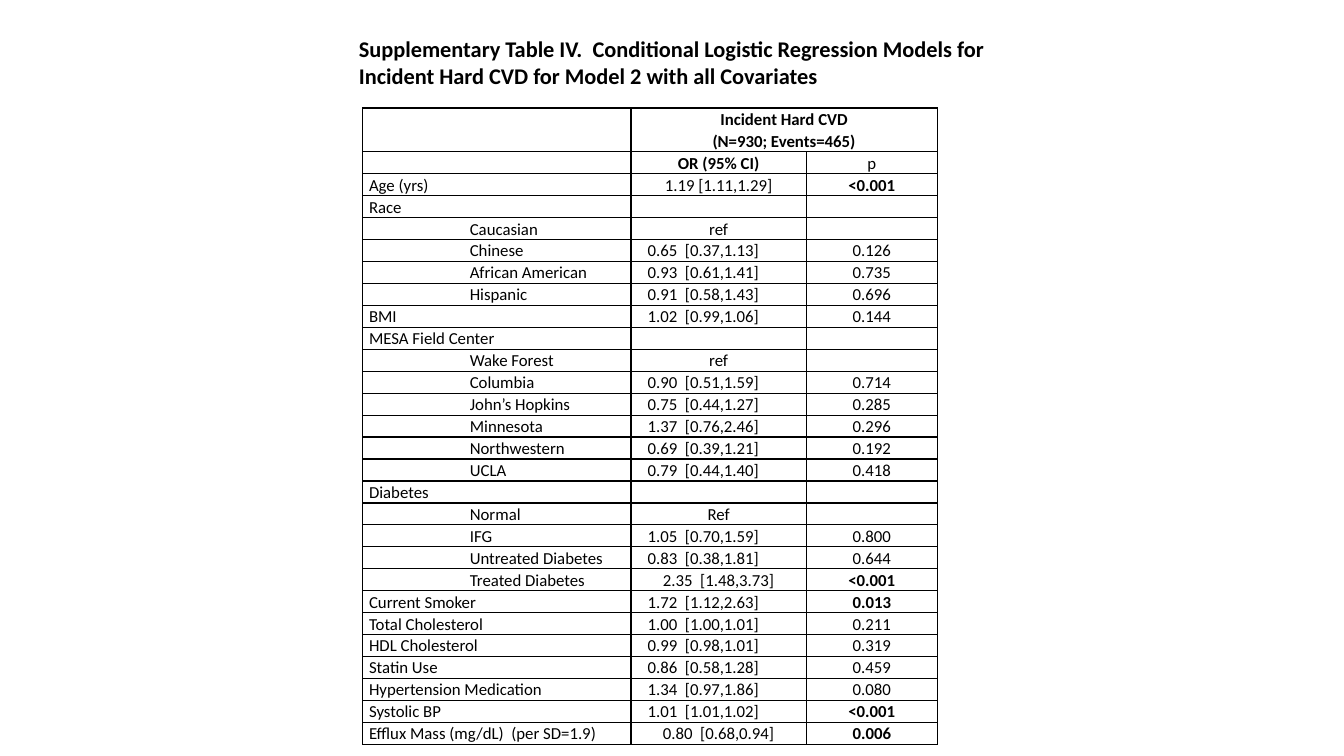
from lxml.etree import SubElement
from pptx import Presentation
from pptx.dml.color import RGBColor
from pptx.enum.text import MSO_ANCHOR, MSO_AUTO_SIZE, PP_ALIGN
from pptx.oxml.ns import qn
from pptx.util import Cm, Pt

BLACK = RGBColor(0x00, 0x00, 0x00)
FONT = "Calibri"
TITLE = ("Supplementary Table IV.  Conditional Logistic Regression Models for "
         "Incident Hard CVD for Model 2 with all Covariates")

SIDE_MARGIN = 0.16
LEVEL_INDENT = 2.54
RATIO_SHIFT = 0.77  # extra right margin of most odds ratios
COLUMN_WIDTHS = (6.76, 4.42, 3.30)
HEADER_HEIGHT, ROW_HEIGHT = 0.99, 0.51

HEADERS = [
    ("", "Incident Hard CVD\v(N=930; Events=465)", ""),
    ("", "OR (95% CI)", "p"),
]
# Covariate, is a level of the group above, odds ratio, p value
COVARIATES = [
    ("Age (yrs)", False, "1.19 [1.11,1.29]", "<0.001"),
    ("Race", False, "", ""),
    ("Caucasian", True, "ref", ""),
    ("Chinese", True, "0.65  [0.37,1.13]", "0.126"),
    ("African American", True, "0.93  [0.61,1.41]", "0.735"),
    ("Hispanic", True, "0.91  [0.58,1.43]", "0.696"),
    ("BMI", False, "1.02  [0.99,1.06]", "0.144"),
    ("MESA Field Center", False, "", ""),
    ("Wake Forest", True, "ref", ""),
    ("Columbia", True, "0.90  [0.51,1.59]", "0.714"),
    ("John’s Hopkins", True, "0.75  [0.44,1.27]", "0.285"),
    ("Minnesota", True, "1.37  [0.76,2.46]", "0.296"),
    ("Northwestern", True, "0.69  [0.39,1.21]", "0.192"),
    ("UCLA", True, "0.79  [0.44,1.40]", "0.418"),
    ("Diabetes", False, "", ""),
    ("Normal", True, "Ref", ""),
    ("IFG", True, "1.05  [0.70,1.59]", "0.800"),
    ("Untreated Diabetes", True, "0.83  [0.38,1.81]", "0.644"),
    ("Treated Diabetes", True, "2.35  [1.48,3.73]", "<0.001"),
    ("Current Smoker", False, "1.72  [1.12,2.63]", "0.013"),
    ("Total Cholesterol", False, "1.00  [1.00,1.01]", "0.211"),
    ("HDL Cholesterol", False, "0.99  [0.98,1.01]", "0.319"),
    ("Statin Use", False, "0.86  [0.58,1.28]", "0.459"),
    ("Hypertension Medication", False, "1.34  [0.97,1.86]", "0.080"),
    ("Systolic BP", False, "1.01  [1.01,1.02]", "<0.001"),
    ("Efflux Mass (mg/dL)  (per SD=1.9)", False, "0.80  [0.68,0.94]", "0.006"),
]
CENTRED_RATIOS = {"Age (yrs)", "Treated Diabetes", "Efflux Mass (mg/dL)  (per SD=1.9)"}


def add_borders(cell):
    properties = cell._tc.get_or_add_tcPr()
    for side in ("a:lnL", "a:lnR", "a:lnT", "a:lnB"):
        line = SubElement(properties, qn(side), w=str(Pt(1)))
        fill = SubElement(line, qn("a:solidFill"))
        SubElement(fill, qn("a:srgbClr"), val=str(BLACK))


def fill_cell(cell, text, bold=False, centred=True, indent=0, shift=0):
    add_borders(cell)
    cell.fill.background()
    margins = {"margin_left": SIDE_MARGIN + indent, "margin_right": SIDE_MARGIN + shift,
               "margin_top": 0, "margin_bottom": 0}
    for name, value in margins.items():
        setattr(cell, name, Cm(value))
    para = cell.text_frame.paragraphs[0]
    para.text = text
    para.alignment = PP_ALIGN.CENTER if centred else PP_ALIGN.LEFT
    para.line_spacing = 1.07
    for span in para.runs:
        for name, value in {"name": FONT, "size": Pt(12), "bold": bold}.items():
            setattr(span.font, name, value)
        span.font.color.rgb = BLACK
    if not text:  # keeps empty rows as low as the others
        SubElement(para._p, qn("a:endParaRPr"), sz="1200")


deck = Presentation()
deck.slide_width, deck.slide_height = Cm(33.87), Cm(19.05)
page = deck.slides.add_slide(deck.slide_layouts[5])

title = page.shapes.title
title.left, title.top, title.width, title.height = Cm(8.79), Cm(0.76), Cm(17.53), Cm(1.63)
frame = title.text_frame
frame.text = TITLE
frame.word_wrap = True
frame.auto_size = MSO_AUTO_SIZE.NONE
frame.vertical_anchor = MSO_ANCHOR.TOP
frame.paragraphs[0].alignment = PP_ALIGN.LEFT
title_font = frame.paragraphs[0].runs[0].font
for name, value in {"name": FONT, "size": Pt(16), "bold": True}.items():
    setattr(title_font, name, value)
title_font.color.rgb = BLACK

row_count = len(HEADERS) + len(COVARIATES)
table = page.shapes.add_table(
    row_count, len(COLUMN_WIDTHS), Cm(9.14), Cm(2.72), Cm(sum(COLUMN_WIDTHS)),
    Cm(HEADER_HEIGHT + ROW_HEIGHT * (row_count - 1))).table
table.first_row = table.horz_banding = False
for column, width in zip(table.columns, COLUMN_WIDTHS):
    column.width = Cm(width)
for row in table.rows:
    row.height = Cm(ROW_HEIGHT)
table.rows[0].height = Cm(HEADER_HEIGHT)

for row, texts in enumerate(HEADERS):
    for column, text in enumerate(texts):
        fill_cell(table.cell(row, column), text, bold=text != "p")
table.cell(0, 1).merge(table.cell(0, 2))

for row, (covariate, is_level, ratio, p_value) in enumerate(COVARIATES, len(HEADERS)):
    shifted = "[" in ratio and covariate not in CENTRED_RATIOS
    significant = p_value != "" and float(p_value.strip("<")) < 0.05
    fill_cell(table.cell(row, 0), covariate, centred=False,
              indent=LEVEL_INDENT if is_level else 0)
    fill_cell(table.cell(row, 1), ratio, shift=RATIO_SHIFT if shifted else 0)
    fill_cell(table.cell(row, 2), p_value, bold=significant)

deck.save("out.pptx")
